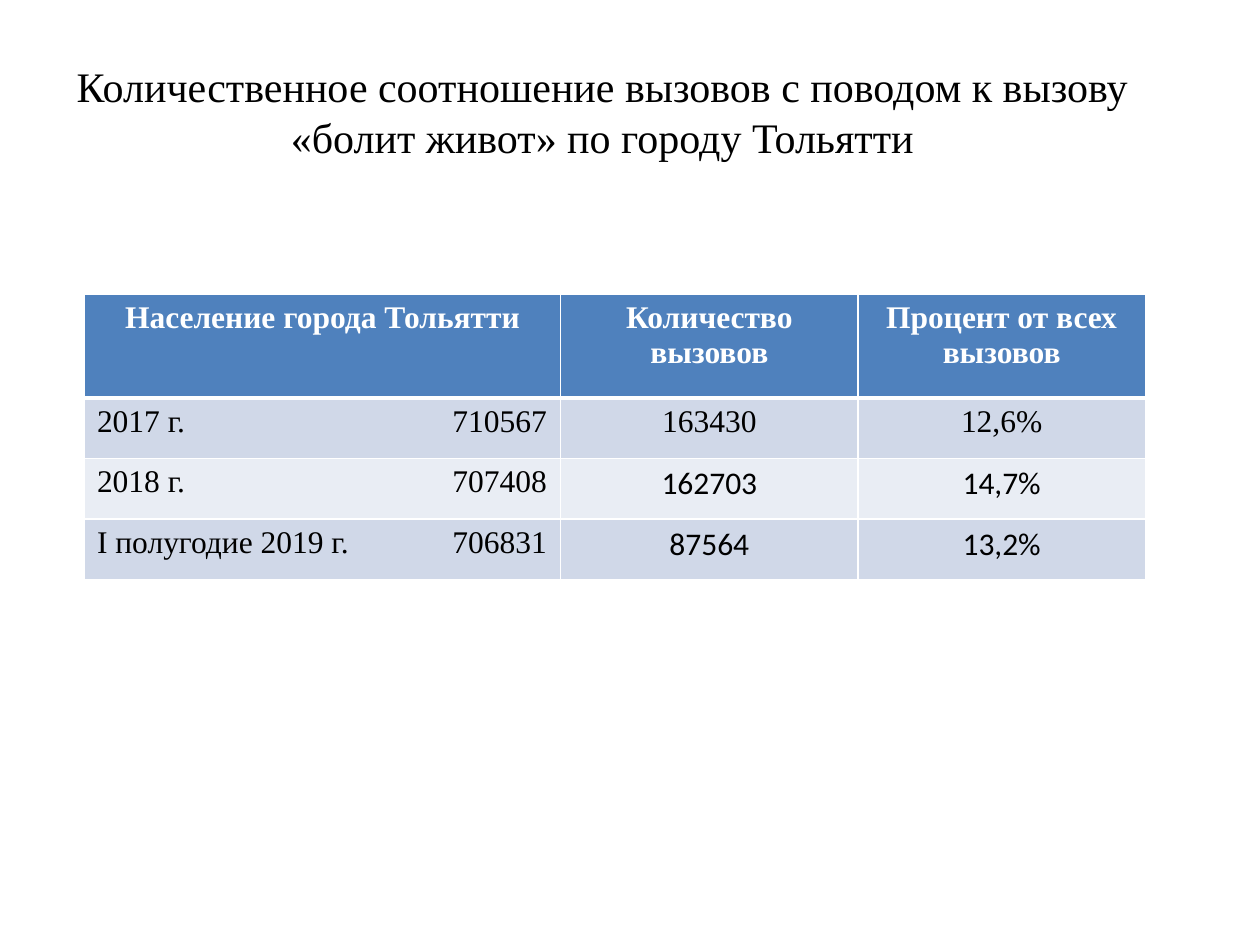
"""Build a slide with a table of emergency calls in Tolyatti."""
from dataclasses import dataclass

from lxml.etree import SubElement
from pptx import Presentation
from pptx.dml.color import RGBColor
from pptx.enum.text import MSO_ANCHOR, PP_ALIGN
from pptx.oxml.ns import qn
from pptx.util import Inches, Pt

SLIDE_WIDTH = Inches(10)
SLIDE_HEIGHT = Inches(7.5)


@dataclass(frozen=True)
class Theme:
    serif: str = "Times New Roman"
    sans: str = "Calibri"
    title_size: int = 24
    table_size: int = 18
    black: str = "000000"
    white: str = "FFFFFF"
    header: str = "4F81BD"
    bands: tuple[str, str] = ("D0D8E8", "E9EDF4")
    thin: float = 1
    thick: float = 3


@dataclass(frozen=True)
class Period:
    name: str
    population: str
    calls: str
    percent: str
    font: str


THEME = Theme()
TITLE = "Количественное соотношение вызовов с поводом к вызову «болит живот» по городу Тольятти"
HEADINGS = ("Население города Тольятти", "Количество вызовов", "Процент от всех вызовов")
PERIODS = (
    Period("2017 г.", "710567", "163430", "12,6%", THEME.serif),
    Period("2018 г.", "707408", "162703", "14,7%", THEME.sans),
    Period("I полугодие 2019 г.", "706831", "87564", "13,2%", THEME.sans),
)
COLUMN_SHARES = (0.378, 0.236, 0.228)
ROW_SHARES = (0.11,) + (0.064,) * len(PERIODS)
POPULATION_TAB = Inches(3.57)


def across(share: float) -> int:
    return round(SLIDE_WIDTH * share)


def down(share: float) -> int:
    return round(SLIDE_HEIGHT * share)


def write(frame, text: str, size: int, font: str, color: str,
          bold: bool = False, alignment=PP_ALIGN.CENTER) -> None:
    paragraph = frame.paragraphs[0]
    paragraph.alignment = alignment
    if "\t" in text:
        tabs = SubElement(paragraph._p.get_or_add_pPr(), qn("a:tabLst"))
        SubElement(tabs, qn("a:tab"), pos=str(POPULATION_TAB), algn="r")
    run = paragraph.add_run()
    run.text = text
    run.font.color.rgb = RGBColor.from_string(color)
    for name, value in {"size": Pt(size), "name": font, "bold": bold}.items():
        setattr(run.font, name, value)


def style_cell(cell, fill: str, top: float, bottom: float) -> None:
    properties = cell._tc.get_or_add_tcPr()
    widths = {"lnL": THEME.thin, "lnR": THEME.thin, "lnT": top, "lnB": bottom}
    for side, width in widths.items():
        line = SubElement(properties, qn(f"a:{side}"), w=str(Pt(width)))
        SubElement(SubElement(line, qn("a:solidFill")), qn("a:srgbClr"), val=THEME.white)
    cell.fill.solid()
    cell.fill.fore_color.rgb = RGBColor.from_string(fill)


def add_title(slide) -> None:
    box = slide.shapes.add_textbox(across(0.028), down(0.07), across(0.9), down(0.095))
    for name, value in {"word_wrap": True, "vertical_anchor": MSO_ANCHOR.MIDDLE}.items():
        setattr(box.text_frame, name, value)
    write(box.text_frame, TITLE, THEME.title_size, THEME.serif, THEME.black)


def add_calls_table(slide) -> None:
    table = slide.shapes.add_table(
        len(ROW_SHARES), len(COLUMN_SHARES), across(0.067), down(0.311),
        across(sum(COLUMN_SHARES)), down(sum(ROW_SHARES))).table
    for column, share in zip(table.columns, COLUMN_SHARES):
        column.width = across(share)
    for row, share in zip(table.rows, ROW_SHARES):
        row.height = down(share)
    for cell, heading in zip(table.rows[0].cells, HEADINGS):
        style_cell(cell, THEME.header, THEME.thin, THEME.thick)
        write(cell.text_frame, heading, THEME.table_size, THEME.serif, THEME.white, bold=True)
    for index, period in enumerate(PERIODS):
        top = THEME.thin if index else THEME.thick
        values = (
            (f"{period.name}\t{period.population}", THEME.serif, PP_ALIGN.LEFT),
            (period.calls, period.font, PP_ALIGN.CENTER),
            (period.percent, period.font, PP_ALIGN.CENTER),
        )
        for cell, (text, font, alignment) in zip(table.rows[index + 1].cells, values):
            style_cell(cell, THEME.bands[index % 2], top, THEME.thin)
            write(cell.text_frame, text, THEME.table_size, font, THEME.black, alignment=alignment)


def main() -> None:
    presentation = Presentation()
    for name, value in {"slide_width": SLIDE_WIDTH, "slide_height": SLIDE_HEIGHT}.items():
        setattr(presentation, name, value)
    slide = presentation.slides.add_slide(presentation.slide_layouts[6])
    add_title(slide)
    add_calls_table(slide)
    presentation.save("out.pptx")


if __name__ == "__main__":
    main()
